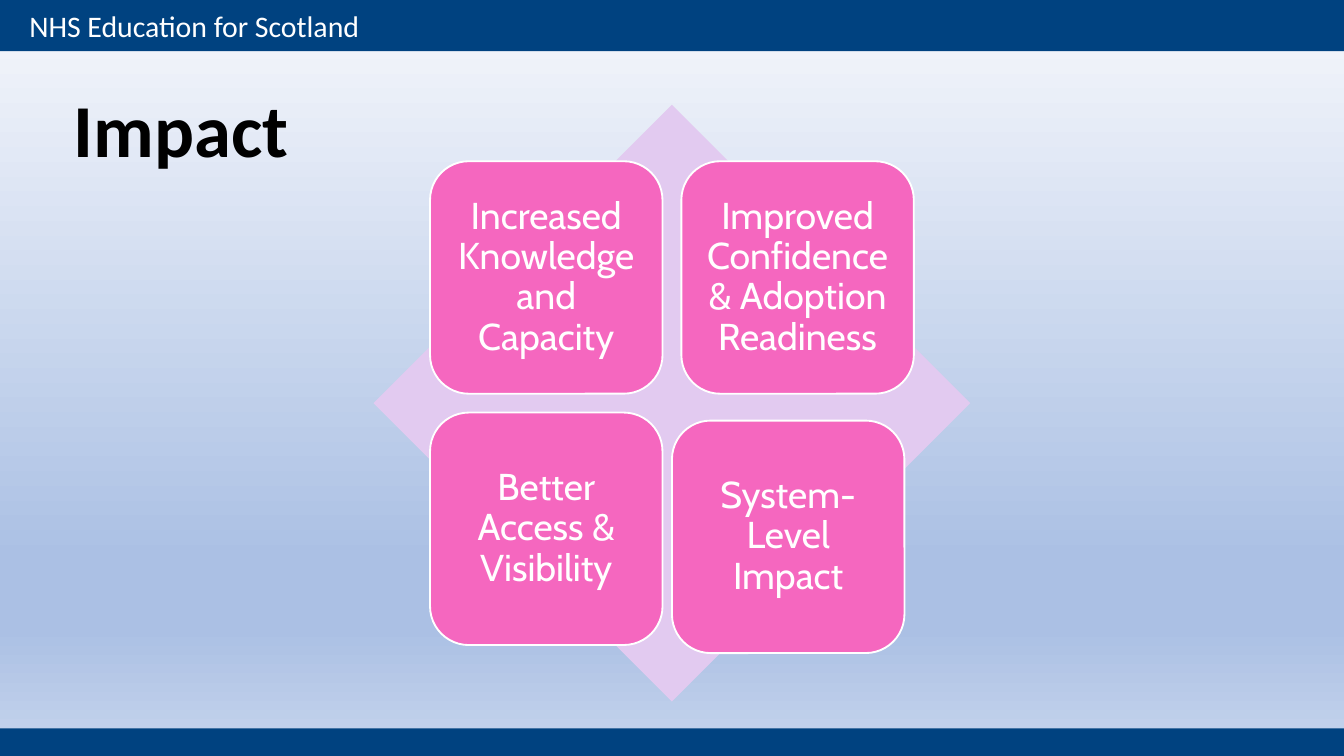
"""Build the Impact slide: four cards over a diamond."""
from copy import deepcopy

from pptx import Presentation
from pptx import util as u
from pptx.dml.color import RGBColor
from pptx.enum import shapes, text

NAVY = RGBColor(0x00, 0x42, 0x80)
PINK = RGBColor(0xF5, 0x67, 0xBF)
LILAC = RGBColor(0xE2, 0xCA, 0xF0)
WHITE = RGBColor(0xFF, 0xFF, 0xFF)
BLACK = RGBColor(0x00, 0x00, 0x00)
PALE = RGBColor(0xF6, 0xF8, 0xFC)
BLUE = RGBColor(0xAB, 0xC0, 0xE4)
LIGHT = RGBColor(0xC7, 0xD5, 0xED)

WIDE = 10
HIGH = WIDE * 9 / 16
HEAD = "NHS Education for Scotland"
TITLE = "Impact"
STOPS = [(0, PALE), (0.74, BLUE), (0.83, BLUE), (1, LIGHT)]
BARS = [(0, 0.38), (5.42, 0.21)]
SIDE, STEP = 1.73, 1.87
LEFT, TOP = 3.2, 1.2
CARDS = [
    ("Increased Knowledge and Capacity", 0, 0),
    ("Improved Confidence & Adoption Readiness", 0, 0),
    ("Better Access & Visibility", 0, 0),
    ("System-Level Impact", -0.07, 0.06),
]


def paint(slide):
    fill = slide.background.fill
    fill.gradient()
    fill.gradient_angle = 270
    stops = slide.element.xpath(".//a:gsLst")[0]
    while len(stops) < len(STOPS):
        stops.append(deepcopy(stops[0]))
    for stop, (place, color) in zip(fill.gradient_stops, STOPS):
        stop.position = place
        stop.color.rgb = color


def draw(slide, kind, box, color):
    shape = slide.shapes.add_shape(kind, *map(u.Inches, box))
    shape.shadow.inherit = False
    shape.fill.solid()
    shape.fill.fore_color.rgb = color
    shape.line.fill.background()
    return shape


def write(shape, words, size, face, color, align=text.PP_ALIGN.LEFT, bold=False):
    frame = shape.text_frame
    frame.text = words
    frame.word_wrap = True
    para = frame.paragraphs[0]
    para.alignment = align
    font = para.runs[0].font
    font.size, font.name, font.bold = u.Pt(size), face, bold
    font.color.rgb = color
    return frame


def main():
    deck = Presentation()
    deck.slide_width, deck.slide_height = u.Inches(WIDE), u.Inches(HIGH)
    slide = deck.slides.add_slide(deck.slide_layouts[5])
    paint(slide)

    for top, high in BARS:
        draw(slide, shapes.MSO_SHAPE.RECTANGLE, (0, top, WIDE, high), NAVY)
    head = slide.shapes.add_textbox(*map(u.Inches, (0.12, 0.01, 4.25, 0.37)))
    write(head, HEAD, 16, "Calibri", WHITE)

    draw(slide, shapes.MSO_SHAPE.DIAMOND, (2.78, 0.78, 4.44, 4.44), LILAC)
    for i, (words, dx, dy) in enumerate(CARDS):
        row, col = divmod(i, 2)
        box = (LEFT + col * STEP + dx, TOP + row * STEP + dy, SIDE, SIDE)
        card = draw(slide, shapes.MSO_SHAPE.ROUNDED_RECTANGLE, box, PINK)
        card.line.color.rgb = WHITE
        card.line.width = u.Pt(1)
        frame = write(card, words, 20, "Cabin", WHITE, text.PP_ALIGN.CENTER)
        frame.vertical_anchor = text.MSO_ANCHOR.MIDDLE
        frame.margin_left = frame.margin_right = u.Inches(0.08)
        frame.margin_top = frame.margin_bottom = u.Inches(0.08)
        frame.paragraphs[0].line_spacing = 0.9

    title = slide.shapes.title
    title.left, title.top = u.Inches(0.45), u.Inches(0.57)
    title.width, title.height = u.Inches(2.09), u.Inches(0.77)
    frame = write(title, TITLE, 40, "Calibri", BLACK, bold=True)
    frame.vertical_anchor = text.MSO_ANCHOR.TOP
    frame.auto_size = text.MSO_AUTO_SIZE.NONE

    deck.save("out.pptx")


if __name__ == "__main__":
    main()
